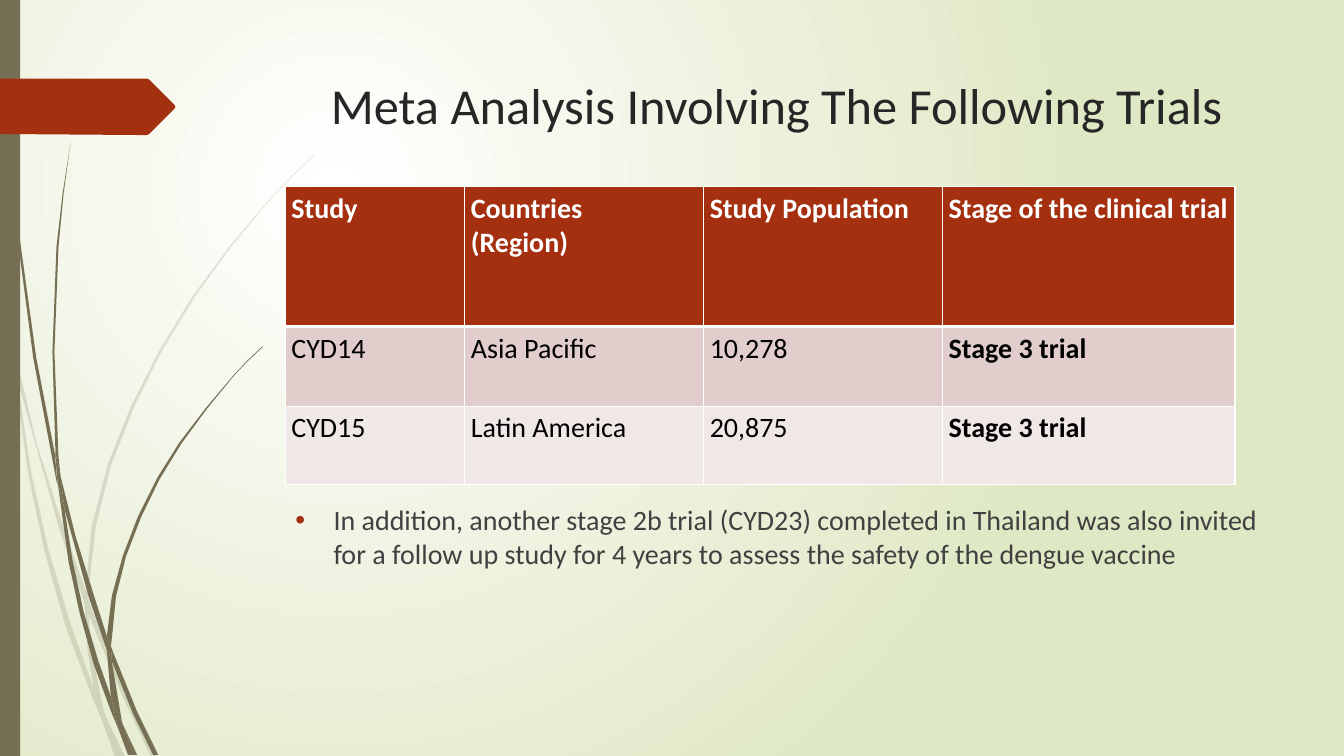
from lxml.etree import SubElement
from pptx import Presentation
from pptx.dml.color import RGBColor
from pptx.enum.shapes import MSO_SHAPE
from pptx.enum.text import PP_ALIGN
from pptx.oxml.ns import qn
from pptx.util import Inches, Pt

HUES = {
    "white": "FFFFFF", "lime": "DFE8C4", "olive": "766F54", "rust": "A53010",
    "title": "262626", "body": "404040", "black": "000000",
    "rose": "E1CDCC", "blush": "F0E8E7",
}
FONTS = {
    "title": {"size": Pt(36), "bold": False},
    "plain": {"size": Pt(20), "bold": False},
    "strong": {"size": Pt(20), "bold": True},
}
# Each piece of grass is the outline of one blade part, in inches.
PALE = [
    [(0.11, 3.5), (0.09, 3.22), (0, 2.82), (0, 2.99), (0.1, 3.44)],
    [(0.58, 5.22), (0.84, 5.99), (0.85, 5.86), (0.62, 5.2), (0.36, 4.39),
     (0.14, 3.45), (0.17, 3.76)],
    [(0.92, 6.07), (0.88, 5.96), (0.88, 6.1), (1.23, 6.94), (1.5, 7.51),
     (1.55, 7.51), (1.27, 6.92)],
    [(1.19, 7.51), (1.24, 7.51), (1.05, 7.11)],
    [(0.93, 6.83), (0.7, 6.19), (0.48, 5.45), (0.31, 4.69), (0.17, 3.76), (0.11, 3.5),
     (0.28, 4.7), (0.44, 5.46), (0.65, 6.21), (0.92, 6.93), (1.01, 7.14), (0.99, 7.07)],
    [(0.84, 5.99), (0.87, 6.46), (0.93, 6.83), (0.96, 6.92), (1.05, 7.11),
     (1.03, 7.06), (0.91, 6.46), (0.88, 6.1), (0.88, 6.08)],
    [(0.88, 5.84), (0.95, 5.22), (1.1, 4.62), (1.33, 4.04), (1.6, 3.49), (1.93, 2.95),
     (2.29, 2.45), (2.68, 1.98), (2.9, 1.75), (3.12, 1.54), (3.12, 1.53),
     (2.89, 1.75), (2.68, 1.97), (2.28, 2.44), (1.91, 2.94), (1.58, 3.48),
     (1.3, 4.03), (1.07, 4.61), (0.91, 5.22), (0.85, 5.84), (0.85, 5.86), (0.88, 5.96)],
    [(1.01, 7.14), (1.14, 7.51), (1.19, 7.51)],
    [(0.88, 6.08), (0.88, 6.1), (0.88, 5.96), (0.85, 5.86), (0.84, 5.99)],
    [(0.96, 6.92), (0.93, 6.83), (0.99, 7.07), (1.01, 7.14), (1.19, 7.51), (1.05, 7.11)],
]
DARK = [
    [(0.07, 1.1), (0.17, 2.33), (0.33, 3.55), (0.56, 4.77), (0.57, 4.81), (0.55, 4.57),
     (0.55, 4.53), (0.36, 3.55), (0.19, 2.32), (0.08, 1.09), (0.05, 0.48), (0.04, 0),
     (0.03, 0), (0.04, 0.48)],
    [(0.88, 5.92), (1.06, 6.45), (1.06, 6.33), (1.06, 6.31), (0.93, 5.9), (0.75, 5.32),
     (0.6, 4.72), (0.64, 5.05)],
    [(1.13, 6.49), (1.1, 6.41), (1.11, 6.56), (1.32, 7.08), (1.52, 7.49), (1.57, 7.49),
     (1.36, 7.06)],
    [(1.1, 6.91), (0.98, 6.57), (0.83, 6.07), (0.72, 5.56), (0.64, 5.05), (0.57, 4.77),
     (0.68, 5.57), (0.79, 6.08), (0.93, 6.59), (1.11, 7.08), (1.17, 7.22), (1.16, 7.17)],
    [(0.6, 4.72), (0.58, 4.53), (0.54, 3.49), (0.58, 2.45), (0.63, 1.93), (0.7, 1.41),
     (0.62, 1.93), (0.56, 2.45), (0.52, 3.49), (0.55, 4.49)],
    [(1.33, 7.49), (1.36, 7.49), (1.22, 7.19)],
    [(0.57, 4.77), (0.64, 5.05), (0.6, 4.72), (0.55, 4.49), (0.55, 4.53)],
    [(1.11, 6.33), (1.15, 5.92), (1.25, 5.52), (1.4, 5.13), (1.58, 4.76), (1.8, 4.4),
     (2.05, 4.06), (2.31, 3.74), (2.45, 3.59), (2.61, 3.44), (2.6, 3.44),
     (2.45, 3.58), (2.31, 3.73), (2.04, 4.05), (1.78, 4.39), (1.56, 4.74),
     (1.37, 5.12), (1.22, 5.51), (1.11, 5.91), (1.06, 6.31), (1.1, 6.41)],
    [(1.17, 7.22), (1.27, 7.49), (1.31, 7.49)],
    [(1.06, 6.45), (1.1, 6.91), (1.16, 7.06), (1.22, 7.19), (1.21, 7.16), (1.11, 6.56),
     (1.09, 6.51)],
    [(1.06, 6.45), (1.09, 6.51), (1.11, 6.56), (1.1, 6.41), (1.06, 6.31), (1.06, 6.33)],
    [(1.16, 7.06), (1.1, 6.91), (1.16, 7.17), (1.17, 7.22), (1.3, 7.49), (1.33, 7.49),
     (1.22, 7.19)],
]
TAB = [(1.73, 1.08), (1.48, 1.33), (1.46, 1.34), (1.36, 1.34), (0, 1.33), (0, 0.78),
       (1.46, 0.78), (1.48, 0.79), (1.73, 1.04), (1.74, 1.06)]
ROWS = [
    ["Study", "Countries\n(Region)", "Study Population", "Stage of the clinical trial"],
    ["CYD14", "Asia Pacific", "10,278", "Stage 3 trial"],
    ["CYD15", "Latin America", "20,875", "Stage 3 trial"],
]
WIDTHS = [1.78, 2.37, 2.37, 2.9]
HEIGHTS = [1.39, 0.79, 0.78]
NOTE = ("In addition, another stage 2b trial (CYD23) completed in Thailand was also "
        "invited for a follow up study for 4 years to assess the safety of the "
        "dengue vaccine")


def tint(name):
    return RGBColor.from_string(HUES[name])


def style(para, kind, hue):
    para.font.name = "Calibri"
    para.font.color.rgb = tint(hue)
    for key, value in FONTS[kind].items():
        setattr(para.font, key, value)


def paint(shape, hue, alpha=100):
    shape.shadow.inherit = False
    shape.fill.solid()
    shape.fill.fore_color.rgb = tint(hue)
    shape.line.fill.background()
    if alpha < 100:
        clr = shape._element.spPr.find(qn("a:solidFill"))[0]
        SubElement(clr, qn("a:alpha"), val=str(alpha * 1000))


def add_piece(slide, points, hue, alpha=100):
    first, *rest = [(Inches(x), Inches(y)) for x, y in points]
    pen = slide.shapes.build_freeform(*first)
    pen.add_line_segments(rest, close=True)
    paint(pen.convert_to_shape(), hue, alpha)


def add_scene(slide, height):
    """Draw the backdrop, the grass, the side bar and the tab."""
    fill = slide.background.fill
    fill.gradient()
    for stop, hue in zip(fill.gradient_stops, ("white", "lime")):
        stop.color.rgb = tint(hue)
    grad = slide.background._cSld.bg.bgPr.find(qn("a:gradFill"))
    grad.remove(grad.find(qn("a:lin")))
    ring = SubElement(grad, qn("a:path"), {"path": "circle"})
    SubElement(ring, qn("a:fillToRect"), l="50000", t="50000", r="100000", b="100000")
    for pieces, alpha in ((PALE, 20), (DARK, 100)):
        for points in pieces:
            add_piece(slide, points, "olive", alpha)
    bar = slide.shapes.add_shape(MSO_SHAPE.RECTANGLE, 0, 0, Inches(0.2), height)
    paint(bar, "olive")
    add_piece(slide, TAB, "rust")


def add_text(slide, box, text, kind, hue):
    frame = slide.shapes.add_textbox(*map(Inches, box)).text_frame
    frame.word_wrap = True
    para = frame.paragraphs[0]
    para.text = text
    style(para, kind, hue)
    return para


def add_title(slide, box):
    para = add_text(slide, box, "Meta Analysis Involving The Following Trials",
                    "title", "title")
    para.alignment = PP_ALIGN.CENTER


def add_note(slide, box):
    para = add_text(slide, box, NOTE, "plain", "body")
    para.space_before = Pt(10)
    props = para._p.get_or_add_pPr()
    props.set("marL", str(Inches(0.38)))
    props.set("indent", str(-Inches(0.38)))
    mark = SubElement(props, qn("a:buClr"))
    SubElement(mark, qn("a:srgbClr"), val=HUES["rust"])
    SubElement(props, qn("a:buFont"), typeface="Arial")
    SubElement(props, qn("a:buChar"), char="•")
    props.append(props.find(qn("a:defRPr")))


def add_edges(cell, thick):
    """Draw white cell edges; thick names the sides that get 3 points."""
    props = cell._tc.get_or_add_tcPr()
    for side in "LRTB":
        width = Pt(3 if side in thick else 1)
        line = SubElement(props, qn("a:ln" + side), w=str(width))
        fill = SubElement(line, qn("a:solidFill"))
        SubElement(fill, qn("a:srgbClr"), val=HUES["white"])


def add_trials(slide, box):
    table = slide.shapes.add_table(
        len(ROWS), len(WIDTHS), *map(Inches, box)).table
    for col, width in zip(table.columns, WIDTHS):
        col.width = Inches(width)
    pads = {"margin_left": 0.06, "margin_right": 0.06,
            "margin_top": 0.05, "margin_bottom": 0.05}
    looks = zip(ROWS, HEIGHTS, ("rust", "rose", "blush"), ("B", "T", ""))
    for i, (texts, height, hue, thick) in enumerate(looks):
        table.rows[i].height = Inches(height)
        for j, text in enumerate(texts):
            cell = table.cell(i, j)
            for key, value in pads.items():
                setattr(cell, key, Inches(value))
            add_edges(cell, thick)
            cell.fill.solid()
            cell.fill.fore_color.rgb = tint(hue)
            cell.text_frame.text = text
            kind = "strong" if i == 0 or j == len(WIDTHS) - 1 else "plain"
            for para in cell.text_frame.paragraphs:
                style(para, kind, "black" if i else "white")


def main():
    deck = Presentation()
    deck.slide_width, deck.slide_height = Inches(13.33), Inches(7.5)
    slide = deck.slides.add_slide(deck.slide_layouts[6])
    add_scene(slide, deck.slide_height)
    add_title(slide, (2.83, 0.69, 9.75, 1.4))
    add_trials(slide, (2.83, 1.85, sum(WIDTHS), sum(HEIGHTS)))
    add_note(slide, (2.83, 4.94, 9.75, 1.51))
    deck.save("out.pptx")


if __name__ == "__main__":
    main()
